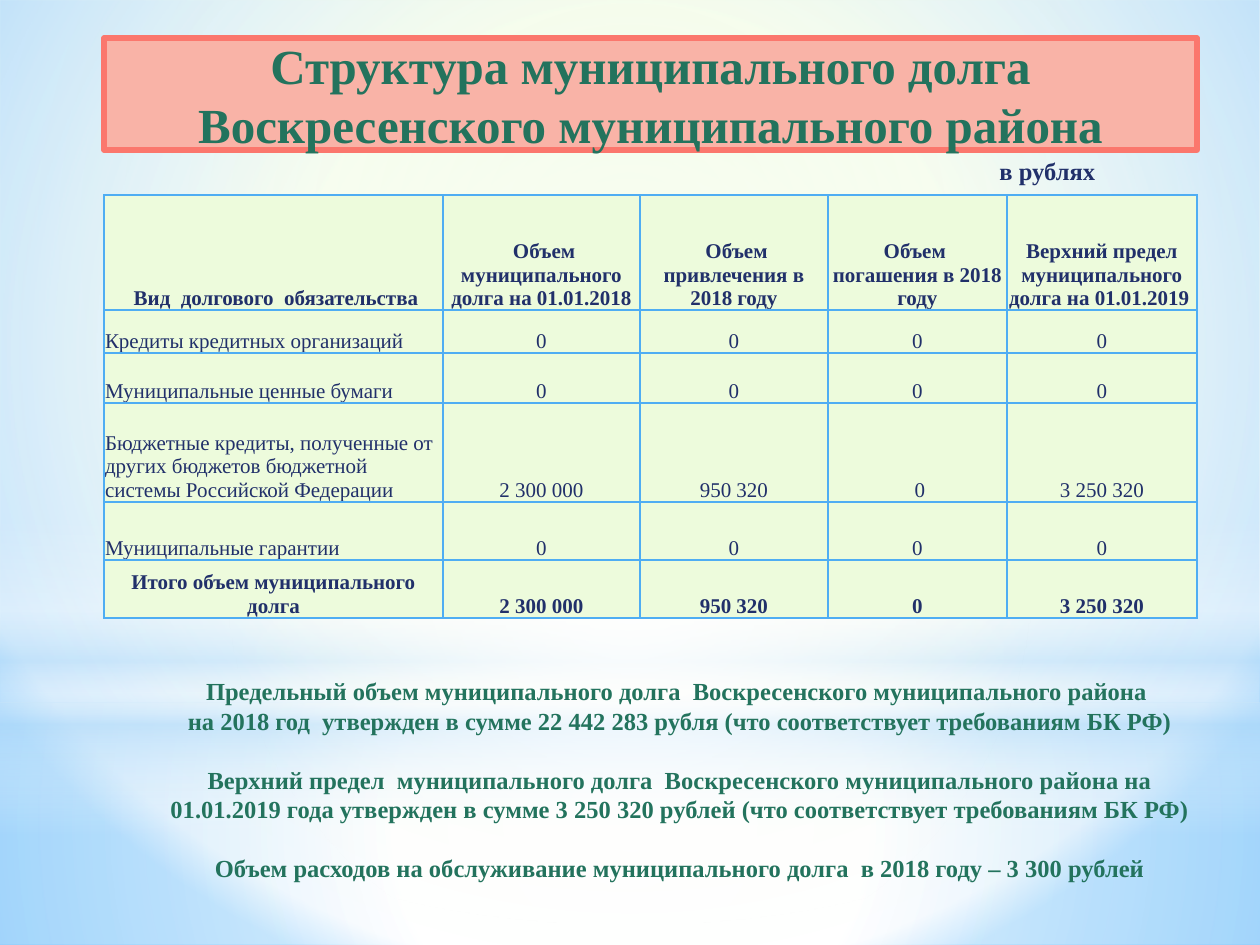
from lxml import etree
from pptx import Presentation
from pptx.dml.color import RGBColor
from pptx.enum.shapes import MSO_SHAPE as Shape
from pptx.enum.text import MSO_ANCHOR as Anchor, MSO_AUTO_SIZE as AutoSize, PP_ALIGN as Align
from pptx.oxml import parse_xml
from pptx.oxml.ns import nsdecls, qn
from pptx.util import Pt

PX = 914400 / 126
FONT = "Times New Roman"
COLORS = {
    "navy": "21306A", "green": "23735D", "salmon": "F9B3A7", "coral": "FB776D",
    "cell": "EDFBDC", "border": "4FADF3", "white": "FFFFFF", "haze": "B4DCFA",
    "lime": "DCF7BA", "sky": "5BB9FF",
}


def add_text(para, text, size, color, bold=True, align=Align.CENTER):
    para.alignment = align
    span = para.add_run()
    span.text = text
    span.font.name = FONT
    span.font.size = Pt(size)
    span.font.bold = bold
    span.font.color.rgb = RGBColor.from_string(COLORS[color])


def set_gradient(parent, stops, center=None):
    marks = "".join(
        f'<a:gs pos="{pos * 1000}"><a:srgbClr val="{COLORS[color]}">'
        f'<a:alpha val="{alpha * 1000}"/></a:srgbClr></a:gs>'
        for pos, color, alpha in stops)
    if center:
        sides = " ".join(f'{side}="{part * 1000}"' for side, part in zip("ltrb", center))
        shade = f'<a:path path="circle"><a:fillToRect {sides}/></a:path>'
    else:
        shade = '<a:lin ang="5400000" scaled="0"/>'
    solid = parent.find(qn("a:solidFill"))
    parent.replace(solid, parse_xml(
        f'<a:gradFill {nsdecls("a")} rotWithShape="1"><a:gsLst>{marks}</a:gsLst>{shade}</a:gradFill>'))


deck = Presentation()
deck.slide_width, deck.slide_height = int(1260 * PX), int(945 * PX)
page = deck.slides.add_slide(deck.slide_layouts[5])

page.background.fill.solid()
set_gradient(page.element.find(".//" + qn("p:bgPr")),
             [(0, "lime", 100), (94, "white", 100), (100, "sky", 100)], (20, 10, 20, 60))

middle = (50, 50, 50, 50)
glows = [
    (Shape.RECTANGLE, 703, 242, middle,
     [(0, "white", 91), (37, "white", 76), (100, "haze", 79)]),
    (Shape.RECTANGLE, 0, 703, middle,
     [(0, "white", 89), (48, "white", 62), (100, "haze", 79)]),
    (Shape.RECTANGLE, 519, 315, None,
     [(0, "white", 0), (29, "white", 30), (45, "haze", 40),
      (55, "white", 26), (65, "haze", 60), (100, "white", 0)]),
    (Shape.OVAL, 220, 703, middle, [(0, "white", 100), (56, "white", 0)]),
]
for kind, top, height, center, stops in glows:
    glow = page.shapes.add_shape(kind, 0, int(top * PX), int(1260 * PX), int(height * PX))
    glow.shadow.inherit = False
    glow.line.fill.background()
    glow.fill.solid()
    set_gradient(glow.element.spPr, stops, center)

units = page.shapes.add_textbox(int(987 * PX), int(150 * PX), int(122 * PX), int(43 * PX))
units.text_frame.word_wrap = False
add_text(units.text_frame.paragraphs[0], "в рублях", 14, "navy", align=Align.LEFT)

rows = [
    [" Вид  долгового  обязательства", " Объем муниципального долга на 01.01.2018",
     " Объем привлечения в 2018 году", "Объем \nпогашения в 2018 году",
     "Верхний предел муниципального долга на 01.01.2019 "],
    ["Кредиты кредитных организаций", "0", "0", "0", "0"],
    ["Муниципальные ценные бумаги", "0", "0", "0", "0"],
    ["Бюджетные кредиты, полученные от других бюджетов бюджетной системы Российской Федерации",
     "2 300 000", "950 320", " 0", "3 250 320"],
    ["Муниципальные гарантии", "0", "0", "0", "0"],
    ["Итого объем муниципального долга", "2 300 000", "950 320", "0", "3 250 320"],
]
widths = [339, 197, 188, 179, 190]
heights = [115, 43, 50, 99, 58, 58]
debt = page.shapes.add_table(len(rows), len(widths), int(104 * PX), int(195 * PX),
                             int(sum(widths) * PX), int(sum(heights) * PX)).table
for column, width in zip(debt.columns, widths):
    column.width = int(width * PX)
for row, height in zip(debt.rows, heights):
    row.height = int(height * PX)
for r, texts in enumerate(rows):
    strong = r in (0, len(rows) - 1)
    for c, text in enumerate(texts):
        cell = debt.cell(r, c)
        cell.vertical_anchor = Anchor.BOTTOM
        cell.margin_left = cell.margin_right = cell.margin_top = int(PX)
        cell.margin_bottom = 0
        cell.fill.solid()
        cell.fill.fore_color.rgb = RGBColor.from_string(COLORS["cell"])
        align = Align.LEFT if c == 0 and not strong else Align.CENTER
        for i, line in enumerate(text.split("\n")):
            frame = cell.text_frame
            para = frame.add_paragraph() if i else frame.paragraphs[0]
            add_text(para, line, 12, "navy", strong, align)
        for i, side in enumerate("LRTB"):
            edge = etree.Element(qn(f"a:ln{side}"), w="12700")
            paint = etree.SubElement(edge, qn("a:solidFill"))
            etree.SubElement(paint, qn("a:srgbClr"), val=COLORS["border"])
            cell._tc.tcPr.insert(i, edge)

notes = [
    ("Предельный объем муниципального долга  Воскресенского муниципального района ", 0),
    ("на 2018 год  утвержден в сумме 22 442 283 рубля (что соответствует требованиям БК РФ)", 0),
    ("Верхний предел  муниципального долга  Воскресенского муниципального района на 01.01.2019 "
     "года утвержден в сумме 3 250 320 рублей (что соответствует требованиям БК РФ)", 17),
    ("Объем расходов на обслуживание муниципального долга  в 2018 году – 3 300 рублей", 17),
]
summary = page.shapes.add_textbox(int(143 * PX), int(670 * PX), int(1074 * PX), int(221 * PX))
summary.text_frame.word_wrap = True
for i, (text, gap) in enumerate(notes):
    para = summary.text_frame.add_paragraph() if i else summary.text_frame.paragraphs[0]
    para.space_before = Pt(gap)
    add_text(para, text, 14, "green")

title = page.shapes.title
title.left, title.top, title.width, title.height = (int(n * PX) for n in (104, 38, 1093, 112))
title.element.spPr.append(parse_xml(
    f'<a:prstGeom {nsdecls("a")} prst="roundRect"><a:avLst/></a:prstGeom>'))
title.fill.solid()
title.fill.fore_color.rgb = RGBColor.from_string(COLORS["salmon"])
title.line.color.rgb = RGBColor.from_string(COLORS["coral"])
title.line.width = Pt(3)
title.text_frame.auto_size = AutoSize.NONE
title.text_frame.word_wrap = True
title.text_frame.vertical_anchor = Anchor.MIDDLE
add_text(title.text_frame.paragraphs[0],
         "Структура муниципального долга Воскресенского муниципального района", 28, "green")
page.shapes._spTree.append(title.element)

deck.save("out.pptx")
